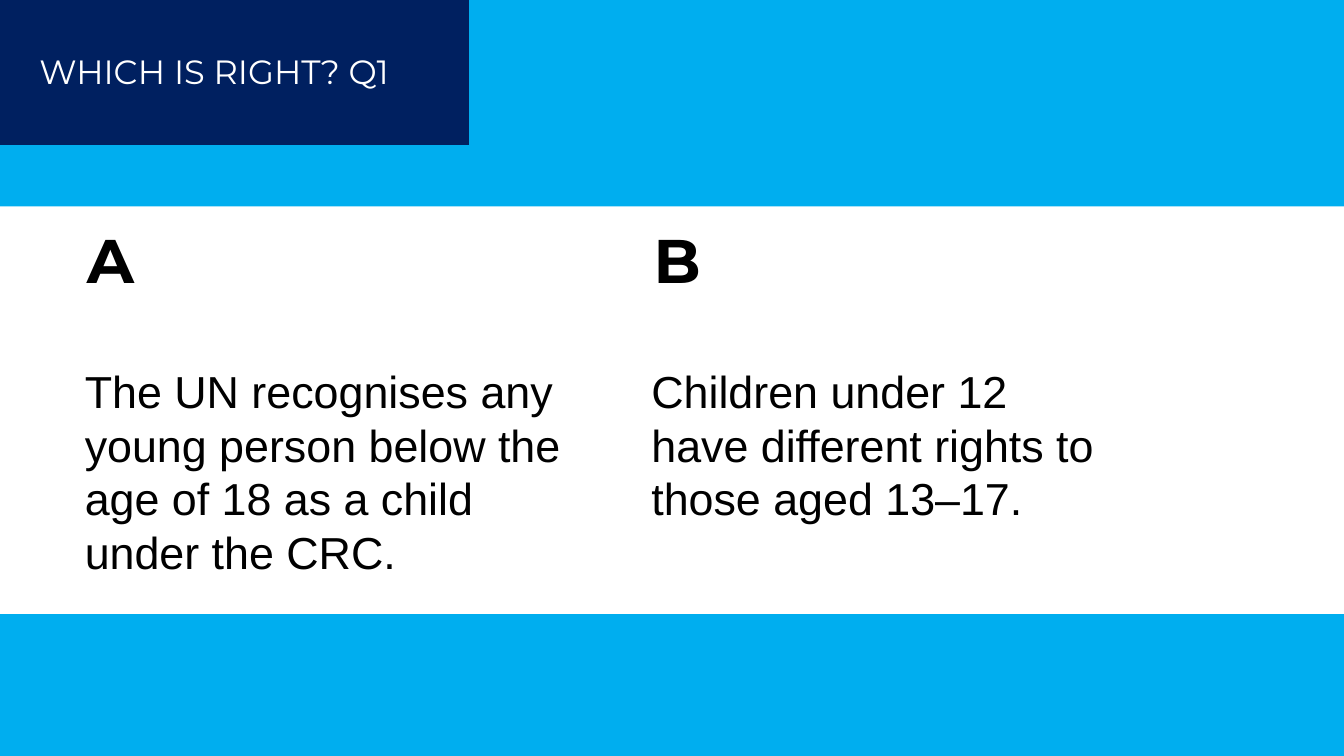
from pptx import Presentation
from pptx.dml.color import RGBColor
from pptx.enum.shapes import MSO_SHAPE
from pptx.enum.text import MSO_ANCHOR, PP_ALIGN
from pptx.util import Pt

COLORS = {"sky": "00AEEF", "navy": "002060", "white": "FFFFFF", "black": "000000"}
WIDTH, HEIGHT = 960, 540


def color(name):
    return RGBColor.from_string(COLORS[name])


def add_block(slide, box, fill):
    block = slide.shapes.add_shape(MSO_SHAPE.RECTANGLE, *map(Pt, box))
    block.shadow.inherit = False
    block.fill.solid()
    block.fill.fore_color.rgb = color(fill)
    block.line.fill.background()
    return block


def set_text(shape, text, size, face, ink, bold=False, pad=(7.2, 3.6)):
    """Fill a shape with one left-aligned paragraph, padded (x, y)."""
    frame = shape.text_frame
    frame.text = text
    frame.word_wrap = True
    frame.vertical_anchor = MSO_ANCHOR.TOP
    frame.margin_left = frame.margin_right = Pt(pad[0])
    frame.margin_top = frame.margin_bottom = Pt(pad[1])
    para = frame.paragraphs[0]
    para.alignment = PP_ALIGN.LEFT
    para.font.size = Pt(size)
    para.font.name = face
    para.font.bold = bold
    para.font.color.rgb = color(ink)
    return para


def add_header(slide, box, text):
    left, top, width, height = box
    panel = add_block(slide, box, "navy")
    title = slide.shapes.title
    title.left, title.top = Pt(left + 21), Pt(top + 32.5)
    title.width, title.height = Pt(width - 38), Pt(36)
    set_text(title, text, 24, "Montserrat", "white")
    panel.element.addnext(title.element)  # bring the title in front of its panel


def add_answer(slide, box, letter, text):
    left, top, width, height = box
    mark = slide.shapes.add_textbox(Pt(left), Pt(top), Pt(53.3), Pt(70.6))
    set_text(mark, letter, 44, "Montserrat", "black", True, (8.64, 8.64))
    body = slide.shapes.add_textbox(Pt(left), Pt(top + 106), Pt(width), Pt(height - 106))
    para = set_text(body, text, 32, "Arial", "black")
    para.line_spacing = Pt(38.4)


def main():
    deck = Presentation()
    deck.slide_width, deck.slide_height = Pt(WIDTH), Pt(HEIGHT)
    slide = deck.slides.add_slide(deck.slide_layouts[5])
    slide.background.fill.solid()
    slide.background.fill.fore_color.rgb = color("sky")

    add_block(slide, (0, 147.5, WIDTH, 291), "white")
    add_header(slide, (0, 0, 335, 103.5), "WHICH IS\u00a0RIGHT? Q1".replace("\u00a0", " "))
    add_answer(slide, (53.5, 150.2, 371, 307), "A",
               "The UN recognises any young person below the age of 18 as a child under the CRC.")
    add_answer(slide, (458.2, 150.2, 333.4, 230), "B",
               "Children under 12 have different rights to those aged 13–17.")
    deck.save("out.pptx")


if __name__ == "__main__":
    main()
